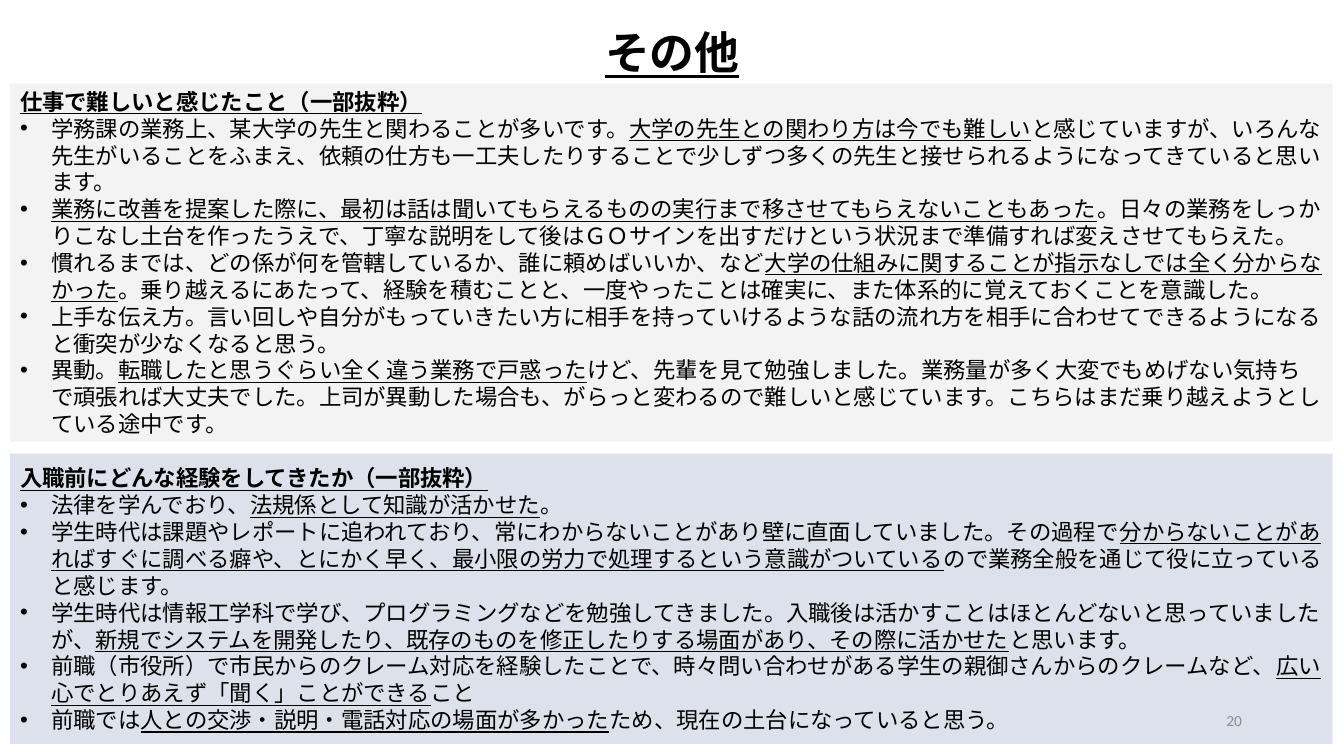
from lxml import etree
from pptx import Presentation
from pptx.dml.color import RGBColor
from pptx.enum.lang import MSO_LANGUAGE_ID
from pptx.enum.shapes import MSO_SHAPE
from pptx.enum.text import MSO_ANCHOR, MSO_AUTO_SIZE, PP_ALIGN
from pptx.oxml.ns import qn
from pptx.util import Inches, Pt

RECT = MSO_SHAPE.RECTANGLE
LEFT, CENTER, RIGHT = PP_ALIGN.LEFT, PP_ALIGN.CENTER, PP_ALIGN.RIGHT
TOP, MIDDLE = MSO_ANCHOR.TOP, MSO_ANCHOR.MIDDLE
JAPANESE = MSO_LANGUAGE_ID.JAPANESE

BLACK = RGBColor(0x00, 0x00, 0x00)
GRAY = RGBColor(0x8C, 0x8C, 0x8C)
PALE_GRAY = RGBColor(0xEF, 0xEF, 0xEF)
PALE_BLUE = RGBColor(0xD0, 0xD6, 0xE4)
JP_FONT = "Noto Sans CJK JP"

# Grid of 0.1 inch cells
CELL = Inches(0.1)
COLS, ROWS = 133.33, 75
INDENT = 3.1


def grid(*cells):
    return [int(CELL * n) for n in cells]


def add_text(p, text, size=16, font=JP_FONT, color=BLACK, bold=False,
             underline=False, align=LEFT, bullet=False):
    """Fill a paragraph; each | in the text switches the underline."""
    p.alignment = align
    if bullet:
        pPr = p._p.get_or_add_pPr()
        indent = grid(INDENT)[0]
        pPr.set("marL", str(indent))
        pPr.set("indent", str(-indent))
        etree.SubElement(pPr, qn("a:buFont")).set("typeface", "Arial")
        etree.SubElement(pPr, qn("a:buChar")).set("char", "•")
    for i, part in enumerate(text.split("|")):
        if part:
            r = p.add_run()
            r.text = part
            r.font.size = Pt(size)
            r.font.name = font
            r.font.bold = bold
            r.font.underline = underline != (i % 2 == 1)
            r.font.color.rgb = color
            r.font.language_id = JAPANESE
            ea = etree.SubElement(r.font._element, qn("a:ea"))
            ea.set("typeface", font)


prs = Presentation()
prs.slide_width, prs.slide_height = grid(COLS, ROWS)
s = prs.slides.add_slide(prs.slide_layouts[6])

# Panels: top row, height, fill, heading, bullets
panels = [
    (8.3, 35.5, PALE_GRAY, "仕事で難しいと感じたこと（一部抜粋）", [
        "学務課の業務上、某大学の先生と関わることが多いです。|大学の先生との関わり方は今でも難しい|と感じていますが、"
        "いろんな先生がいることをふまえ、依頼の仕方も一工夫したりすることで少しずつ多くの先生と接せられるように"
        "なってきていると思います。",
        "|業務に改善を提案した際に、最初は話は聞いてもらえるものの実行まで移させてもらえないこともあった|。"
        "日々の業務をしっかりこなし土台を作ったうえで、丁寧な説明をして後はＧＯサインを出すだけという状況まで"
        "準備すれば変えさせてもらえた。",
        "慣れるまでは、どの係が何を管轄しているか、誰に頼めばいいか、など|大学の仕組みに関することが指示なしでは"
        "全く分からなかった|。乗り越えるにあたって、経験を積むことと、一度やったことは確実に、また体系的に"
        "覚えておくことを意識した。",
        "上手な伝え方。言い回しや自分がもっていきたい方に相手を持っていけるような話の流れ方を相手に合わせて"
        "できるようになると衝突が少なくなると思う。",
        "異動。|転職したと思うぐらい全く違う業務で戸惑った|けど、先輩を見て勉強しました。業務量が多く大変でも"
        "めげない気持ちで頑張れば大丈夫でした。上司が異動した場合も、がらっと変わるので難しいと感じています。"
        "こちらはまだ乗り越えようとしている途中です。",
    ]),
    (45, 28.8, PALE_BLUE, "入職前にどんな経験をしてきたか（一部抜粋）", [
        "法律を学んでおり、|法規係として知識が活かせた|。",
        "学生時代は課題やレポートに追われており、常にわからないことがあり壁に直面していました。その過程で"
        "|分からないことがあればすぐに調べる癖や、とにかく早く、最小限の労力で処理するという意識がついている|"
        "ので業務全般を通じて役に立っていると感じます。",
        "学生時代は情報工学科で学び、プログラミングなどを勉強してきました。入職後は活かすことはほとんどないと"
        "思っていましたが、|新規でシステムを開発したり、既存のものを修正したりする場面があり、その際に活かせた|"
        "と思います。",
        "前職（市役所）で市民からのクレーム対応を経験したことで、時々問い合わせがある学生の親御さんからの"
        "クレームなど、|広い心でとりあえず「聞く」ことができる|こと",
        "前職では|人との交渉・説明・電話対応の場面が多かった|ため、現在の土台になっていると思う。",
    ]),
]
for top, height, fill, heading, bullets in panels:
    sp = s.shapes.add_shape(RECT, *grid(1, top, 131.2, height))
    sp.shadow.inherit = False
    sp.line.fill.background()
    sp.fill.solid()
    sp.fill.fore_color.rgb = fill
    rgb = sp._element.spPr.find(qn("a:solidFill")).find(qn("a:srgbClr"))
    etree.SubElement(rgb, qn("a:alpha")).set("val", "72000")
    tf = sp.text_frame
    tf.word_wrap = True
    tf.vertical_anchor = MIDDLE
    add_text(tf.paragraphs[0], heading, bold=True, underline=True)
    for bullet in bullets:
        add_text(tf.add_paragraph(), bullet, bullet=True)

# Title and slide number
labels = [
    ((3.7, 2, 126, 6.4), TOP, MSO_AUTO_SIZE.SHAPE_TO_FIT_TEXT, "その他",
     dict(size=32, bold=True, underline=True, align=CENTER)),
    ((94.2, 69.5, 30, 4), MIDDLE, MSO_AUTO_SIZE.NONE, "20",
     dict(size=11, font="Calibri", color=GRAY, align=RIGHT)),
]
for box, anchor, auto_size, text, style in labels:
    tf = s.shapes.add_textbox(*grid(*box)).text_frame
    tf.word_wrap = True
    tf.auto_size = auto_size
    tf.vertical_anchor = anchor
    add_text(tf.paragraphs[0], text, **style)

prs.save("out.pptx")
